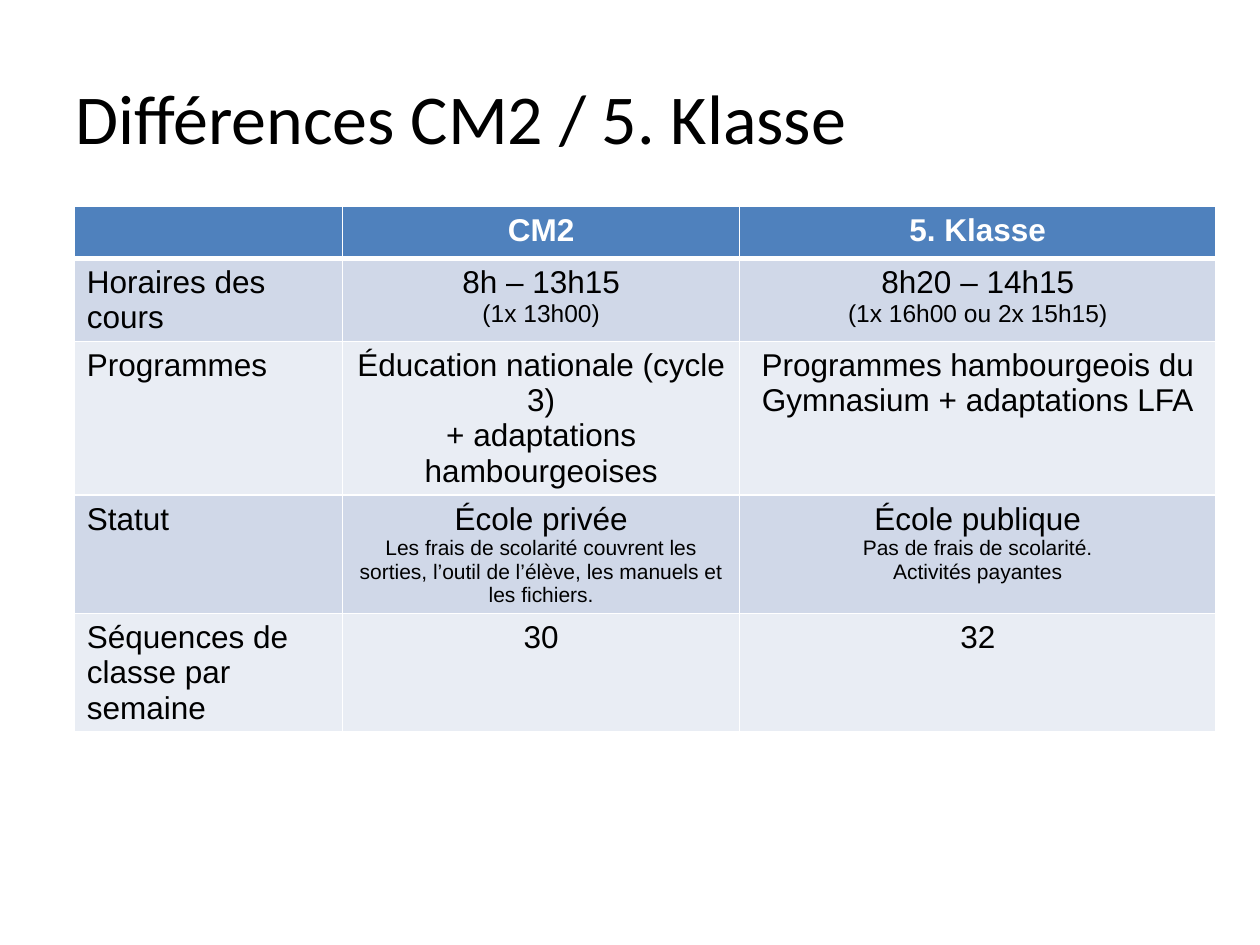
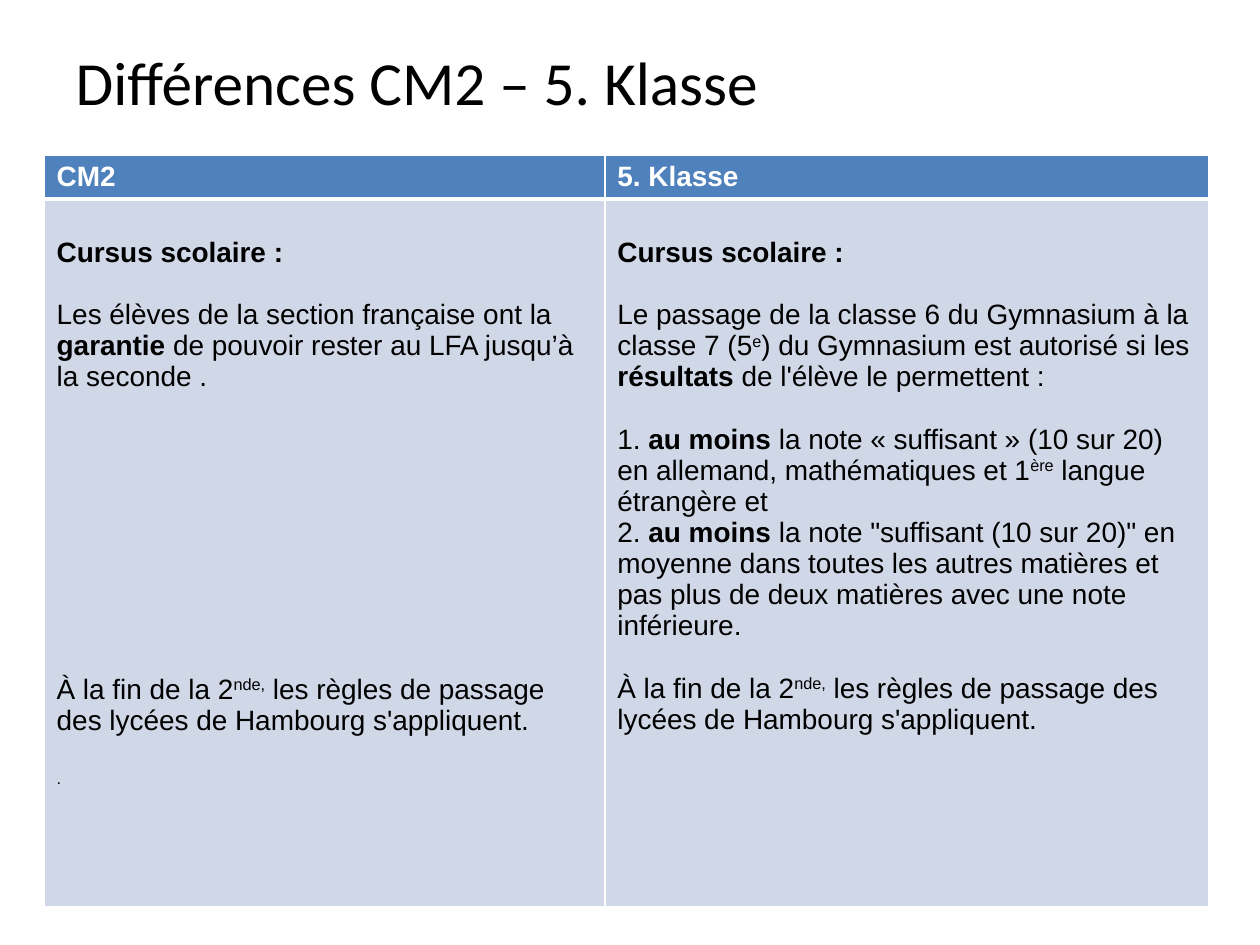
from lxml import etree
from pptx import Presentation
from pptx import util as u
from pptx.dml.color import RGBColor
from pptx.enum import text
from pptx.oxml.ns import qn

COLORS = {"header": "4F81BD", "odd": "D0D8E8", "even": "E9EDF4",
          "white": "FFFFFF", "black": "000000"}
COLS, ROWS = 100, 75
TITLE_ONLY = 5
LEFT, CENTER = text.PP_ALIGN.LEFT, text.PP_ALIGN.CENTER
LINE = 1.117  # height of one line of Arial, as a share of its size


def rgb(name):
    return RGBColor.from_string(COLORS[name])


def write(p, content, font="Arial", size=18, color="black", bold=False, align=LEFT, gap=0):
    """Fill p; *stars* mark bold, ^carets^ superscript; gap is in blank lines above."""
    p.alignment = align
    if gap:
        p.space_before = u.Pt(round(gap * size * LINE, 1))
    for i, part in enumerate(content.split("*")):
        for j, piece in enumerate(part.split("^")):
            if not piece:
                continue
            r = p.add_run()
            r.text = piece
            r.font.name, r.font.size = font, u.Pt(size)
            r.font.bold = bold or i % 2 == 1
            r.font.color.rgb = rgb(color)
            if j % 2:
                r.font._element.set("baseline", "30000")


def set_borders(cell, **widths):
    """Draw white lines on the sides L, R, T and B, with widths in points."""
    tc_pr = cell._tc.get_or_add_tcPr()
    for i, side in enumerate("LRTB"):
        ln = etree.Element(qn(f"a:ln{side}"), w=str(u.Pt(widths.get(side, 1))))
        fill = etree.SubElement(ln, qn("a:solidFill"))
        etree.SubElement(fill, qn("a:srgbClr"), val=COLORS["white"])
        tc_pr.insert(i, ln)


class Deck:
    def __init__(self):
        self.prs = Presentation()
        self.prs.slide_width, self.prs.slide_height = u.Inches(10), u.Inches(7.5)
        self.s = None

    def x(self, cols):
        return round(self.prs.slide_width * cols / COLS)

    def y(self, rows):
        return round(self.prs.slide_height * rows / ROWS)

    def slide(self, title, size, anchor):
        self.s = self.prs.slides.add_slide(self.prs.slide_layouts[TITLE_ONLY])
        sp = self.s.shapes.title
        sp.left, sp.top, sp.width, sp.height = self.x(5), self.y(3), self.x(90), self.y(12.5)
        tf = sp.text_frame
        tf.auto_size, tf.word_wrap = text.MSO_AUTO_SIZE.NONE, True
        tf.vertical_anchor = anchor
        write(tf.paragraphs[0], title, font="Calibri", size=size)

    def table(self, left, top, widths, heights, cells, size, aligns, body_top=0.5):
        """cells holds rows of cells; a cell is a list of (text, format) pairs."""
        tbl = self.s.shapes.add_table(len(heights), len(widths), self.x(left), self.y(top),
                                      self.x(sum(widths)), self.y(sum(heights))).table
        for column, width in zip(tbl.columns, widths):
            column.width = self.x(width)
        for row, height in zip(tbl.rows, heights):
            row.height = self.y(height)
        for i, row in enumerate(cells):
            head = i == 0
            look = {"color": "white", "bold": True} if head else {}
            for j, paragraphs in enumerate(row):
                cell = tbl.cell(i, j)
                cell.fill.solid()
                cell.fill.fore_color.rgb = rgb("header" if head else "odd" if i % 2 else "even")
                set_borders(cell, T=3 if i == 1 else 1, B=3 if head else 1)
                if not head:
                    cell.margin_top = self.y(body_top)
                tf = cell.text_frame
                for n, (content, form) in enumerate(paragraphs):
                    p = tf.add_paragraph() if n else tf.paragraphs[0]
                    write(p, content, **{"size": size, "align": aligns[j], **look, **form})


def lines(*contents, **form):
    return [(content, form) for content in contents]


def comparison_slide(deck):
    deck.slide("Différences CM2 / 5. Klasse", 40, text.MSO_ANCHOR.MIDDLE)
    cells = [
        [[], lines("CM2"), lines("5. Klasse")],
        [lines("Horaires des cours"),
         lines("8h – 13h15") + lines("(1x 13h00)", size=14),
         lines("8h20 – 14h15") + lines("(1x 16h00 ou 2x 15h15)", size=14)],
        [lines("Programmes"),
         lines("Éducation nationale (cycle 3)", "+ adaptations hambourgeoises"),
         lines("Programmes hambourgeois du Gymnasium + adaptations LFA")],
        [lines("Statut"),
         lines("École privée") + lines(
             "Les frais de scolarité couvrent les sorties, l’outil de l’élève, "
             "les manuels et les fichiers.", size=12),
         lines("École publique") + lines(
             "Pas de frais de scolarité.", "Activités payantes", size=12)],
        [lines("Séquences de classe par semaine"), lines("30"), lines("32")],
    ]
    deck.table(5.9, 16.4, [21.3, 31.5, 37.8], [4.1, 6.5, 12.2, 9.4, 9.4], cells,
               size=18, aligns=[LEFT, CENTER, CENTER])


def curriculum_slide(deck):
    deck.slide("Différences CM2 – 5. Klasse", 35, text.MSO_ANCHOR.TOP)
    heading = lines("*Cursus scolaire :*")
    final_rule = ("À la fin de la 2^nde,^ les règles de passage des lycées de Hambourg "
                  "s'appliquent.")
    cm2 = heading + [
        ("Les élèves de la section française ont la* garantie *de pouvoir rester au LFA "
         "jusqu’à la seconde .", {"gap": 1}),
        (final_rule, {"gap": 9}),
        ("^.^", {"gap": 1}),
    ]
    klasse = heading + [
        ("Le passage de la classe 6 du Gymnasium à la classe 7 (5^e^) du Gymnasium est "
         "autorisé si les* résultats *de l'élève le permettent :", {"gap": 1}),
        ("1. *au moins *la note « suffisant » (10 sur 20) en allemand, mathématiques "
         "et 1^ère^ langue étrangère et", {"gap": 1}),
        ("2. *au moins *la note \"suffisant (10 sur 20)\" en moyenne dans toutes les autres "
         "matières et pas plus de deux matières avec une note inférieure.", {}),
        (final_rule, {"gap": 1}),
    ]
    deck.table(3.5, 12.3, [44.5, 47.9], [3.5, 56.2],
               [[lines("CM2"), lines("5. Klasse")], [cm2, klasse]],
               size=16, aligns=[LEFT, LEFT], body_top=3)


def main():
    deck = Deck()
    comparison_slide(deck)
    curriculum_slide(deck)
    deck.prs.save("out.pptx")


if __name__ == "__main__":
    main()
